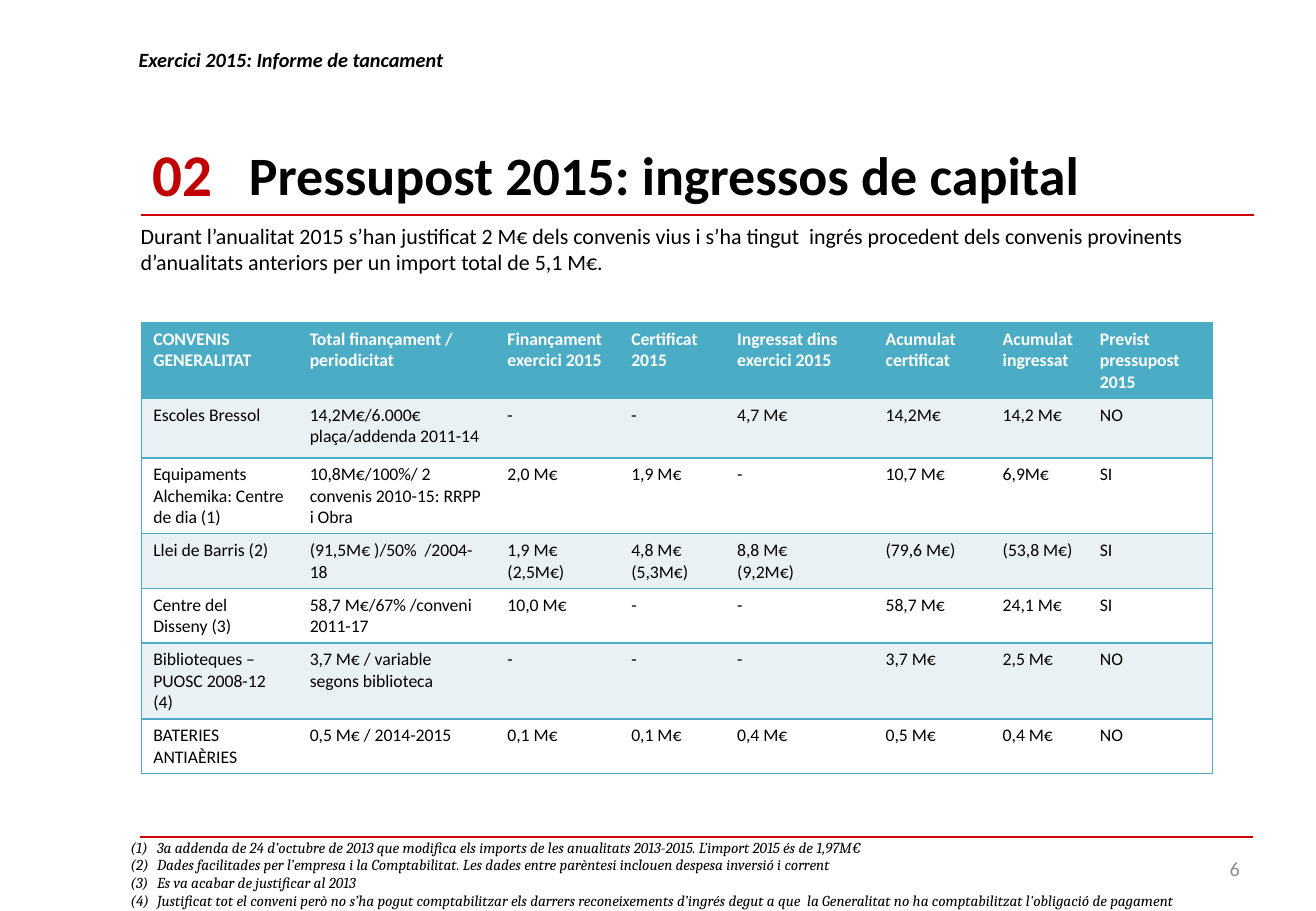
from lxml.etree import SubElement
from pptx import Presentation
from pptx.dml.color import RGBColor
from pptx.enum.shapes import MSO_CONNECTOR
from pptx.enum.text import MSO_ANCHOR, PP_ALIGN
from pptx.oxml.ns import qn
from pptx.util import Pt

COLORS = {"text": "000000", "rule": "CC0000", "number": "C00000", "page": "8C8C8C",
          "header": "4BACC6", "band": "E9F1F5", "white": "FFFFFF"}
PLAIN_TABLE = "{2D5ABB26-0587-4C30-8999-92F81FD0307C}"


def rgb(name):
    return RGBColor.from_string(COLORS[name])


class SlideBuilder:
    def __init__(self, slide, font="Calibri"):
        self.slide = slide
        self.font = font

    def style(self, frame, size, color="text", bold=False, italic=False, font=None):
        for paragraph in frame.paragraphs:
            for run in paragraph.runs:
                run.font.name = font or self.font
                run.font.size = Pt(size)
                run.font.bold = bold
                run.font.italic = italic
                run.font.color.rgb = rgb(color)

    def text(self, box, content, size, anchor=MSO_ANCHOR.TOP, align=PP_ALIGN.LEFT,
             hanging=0, **look):
        frame = self.slide.shapes.add_textbox(*map(Pt, box)).text_frame
        frame.word_wrap = True
        frame.vertical_anchor = anchor
        frame.text = content
        paragraph = frame.paragraphs[0]
        paragraph.alignment = align
        if hanging:
            properties = paragraph._p.get_or_add_pPr()
            properties.set("marL", str(Pt(hanging)))
            properties.set("indent", str(-Pt(hanging)))
        self.style(frame, size, **look)

    def rule(self, left, top, width):
        line = self.slide.shapes.add_connector(
            MSO_CONNECTOR.STRAIGHT, Pt(left), Pt(top), Pt(left + width), Pt(top))
        line.line.color.rgb = rgb("rule")
        line.line.width = Pt(1)
        SubElement(line._element.spPr, qn("a:effectLst"))

    def border(self, cell, sides, color):
        properties = cell._tc.get_or_add_tcPr()
        for side in sides:
            edge = SubElement(properties, qn(f"a:ln{side}"), w=str(Pt(1)))
            fill = SubElement(edge, qn("a:solidFill"))
            SubElement(fill, qn("a:srgbClr"), val=COLORS[color])

    def table(self, left, top, widths, heights, rows, size):
        table = self.slide.shapes.add_table(
            len(rows), len(widths), Pt(left), Pt(top),
            Pt(sum(widths)), Pt(sum(heights))).table
        table._tbl.tblPr.find(qn("a:tableStyleId")).text = PLAIN_TABLE
        table.horz_banding = False
        for column, width in zip(table.columns, widths):
            column.width = Pt(width)
        last = len(widths) - 1
        for r, (values, height) in enumerate(zip(rows, heights)):
            table.rows[r].height = Pt(height)
            background = "header" if r == 0 else "band" if r % 2 else "white"
            for c, value in enumerate(values):
                cell = table.cell(r, c)
                cell.text_frame.text = value
                self.style(cell.text_frame, size, "white" if r == 0 else "text", r == 0)
                self.border(cell, "L" * (c == 0) + "R" * (c == last) + "TB", "header")
                cell.fill.solid()
                cell.fill.fore_color.rgb = rgb(background)


presentation = Presentation()
presentation.slide_width, presentation.slide_height = Pt(780), Pt(540)
builder = SlideBuilder(presentation.slides.add_slide(presentation.slide_layouts[6]))

# Rules and running header
builder.rule(83.5, 127.5, 659.5)
builder.rule(83, 496, 659.5)
builder.text((75, 24.5, 292, 22), "Exercici 2015: Informe de tancament", 12,
             bold=True, italic=True)

# Title and page number
builder.text((140.4, 78, 613, 50), "Pressupost 2015: ingressos de capital", 32,
             anchor=MSO_ANCHOR.MIDDLE, bold=True)
builder.text((83.5, 78, 51, 50), "02", 35, color="number", bold=True)
builder.text((560, 500, 182, 29), "6", 12, anchor=MSO_ANCHOR.MIDDLE,
             align=PP_ALIGN.RIGHT, color="page")

# Introduction
builder.text((76.3, 128.2, 671, 55),
             "Durant l’anualitat 2015 s’han justificat 2 M€ dels convenis vius i s’ha tingut  "
             "ingrés procedent dels convenis provinents d’anualitats anteriors per un import "
             "total de 5,1 M€.", 13)

# Agreements table
agreements = [
    ("CONVENIS GENERALITAT", "Total finançament / periodicitat",
     "Finançament exercici 2015", "Certificat 2015", "Ingressat dins exercici 2015",
     "Acumulat certificat", "Acumulat ingressat", "Previst pressupost 2015"),
    ("Escoles Bressol", "14,2M€/6.000€ plaça/addenda 2011-14",
     "-", "-", "4,7 M€", "14,2M€", "14,2 M€", "NO"),
    ("Equipaments Alchemika: Centre de dia (1)",
     "10,8M€/100%/ 2 convenis 2010-15: RRPP i Obra",
     "2,0 M€", "1,9 M€", "-", "10,7 M€", "6,9M€", "SI"),
    ("Llei de Barris (2)", "(91,5M€ )/50%  /2004-18", "1,9 M€\n(2,5M€)",
     "4,8 M€\n(5,3M€)", "8,8 M€\n(9,2M€)", "(79,6 M€)", "(53,8 M€)", "SI"),
    ("Centre del Disseny (3)", "58,7 M€/67% /conveni 2011-17",
     "10,0 M€", "-", "-", "58,7 M€", "24,1 M€", "SI"),
    ("Biblioteques –PUOSC 2008-12 (4)", "3,7 M€ / variable segons biblioteca",
     "-", "-", "-", "3,7 M€", "2,5 M€", "NO"),
    ("BATERIES ANTIAÈRIES", "0,5 M€ / 2014-2015",
     "0,1 M€", "0,1 M€", "0,4 M€", "0,5 M€", "0,4 M€", "NO"),
]
builder.table(83.7, 191.2, [92.7, 117.2, 73.4, 62.8, 88, 69.4, 57.6, 74],
              [34.6, 35.2, 43.2] + [31] * 4, agreements, 10.5)

# Footnotes
footnotes = [
    "3a addenda de 24 d’octubre de 2013 que modifica els imports de les anualitats "
    "2013-2015. L’import 2015 és de 1,97M€",
    "Dades facilitades per l’empresa i la Comptabilitat. Les dades entre parèntesi "
    "inclouen despesa inversió i corrent",
    "Es va acabar de justificar al 2013",
    "Justificat tot el conveni però no s’ha pogut comptabilitzar els darrers "
    "reconeixements d’ingrés degut a que  la Generalitat no ha comptabilitzat "
    "l'obligació de pagament",
]
for index, note in enumerate(footnotes):
    builder.text((70.2, 493.2 + 10.5 * index, 677, 18), f"({index + 1})\t{note}", 9,
                 hanging=15.8, italic=True, font="Cambria")

presentation.save("out.pptx")
